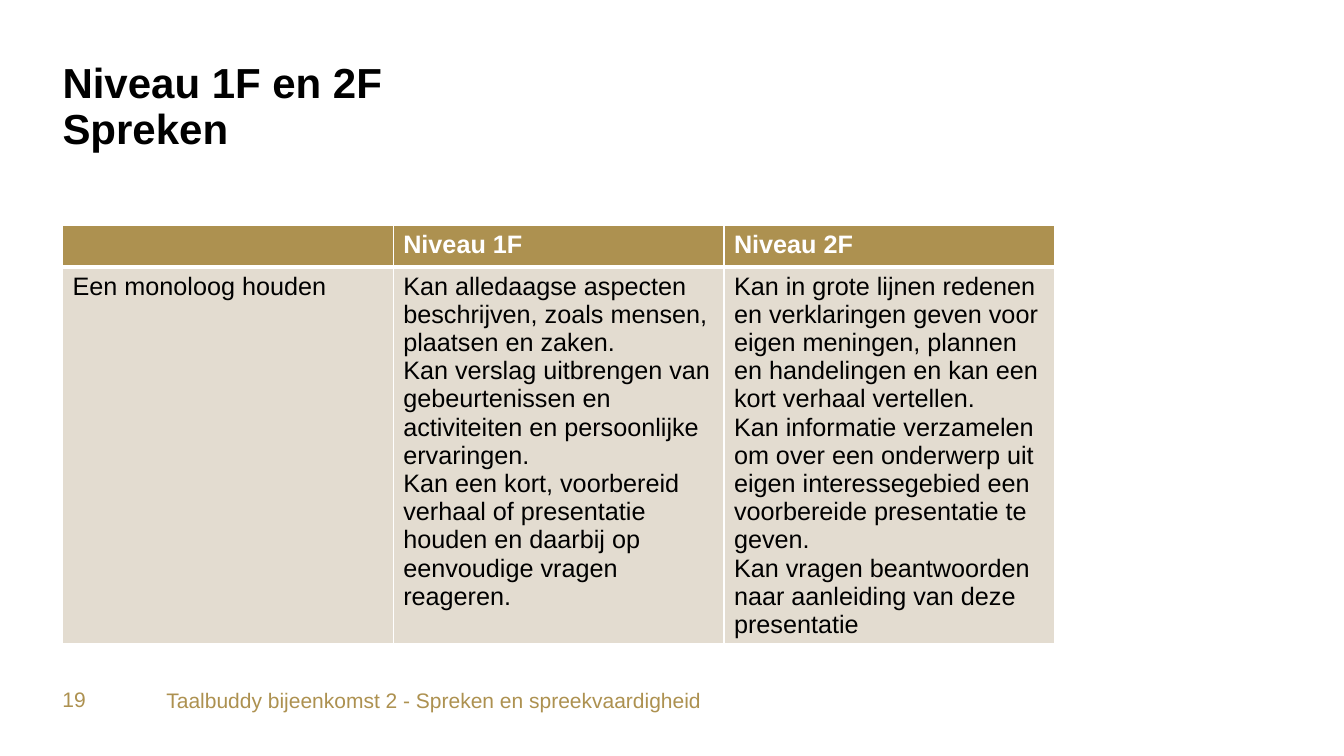
from lxml import etree
from pptx import Presentation
from pptx.dml.color import RGBColor
from pptx.enum.text import MSO_ANCHOR, MSO_AUTO_SIZE, PP_ALIGN
from pptx.oxml.ns import qn
from pptx.util import Inches, Pt

TOP = MSO_ANCHOR.TOP
FIXED = MSO_AUTO_SIZE.NONE
LEFT = PP_ALIGN.LEFT
WIDE, HIGH = 13.33, 7.5
EDGE = 0.62
GOLD, SAND, WHITE, BLACK = "AD9150", "E3DCD0", "FFFFFF", "000000"
HEAD = ["", "Niveau 1F", "Niveau 2F"]
BODY = [
    "Een monoloog houden",
    "Kan alledaagse aspecten beschrijven, zoals mensen, plaatsen en zaken.\n"
    "Kan verslag uitbrengen van gebeurtenissen en activiteiten en persoonlijke ervaringen.\n"
    "Kan een kort, voorbereid verhaal of presentatie houden en daarbij op eenvoudige vragen reageren.",
    "Kan in grote lijnen redenen en verklaringen geven voor eigen meningen, plannen en handelingen "
    "en kan een kort verhaal vertellen.\n"
    "Kan informatie verzamelen om over een onderwerp uit eigen interessegebied een voorbereide "
    "presentatie te geven.\n"
    "Kan vragen beantwoorden naar aanleiding van deze presentatie",
]


def tint(code):
    """Turn a hex string into a colour."""
    return RGBColor.from_string(code)


def write(frame, text, size=18, color=BLACK, bold=False, space=1.0):
    """Fill a text frame with formatted paragraphs."""
    frame.text = text
    frame.word_wrap = True
    for para in frame.paragraphs:
        para.alignment = LEFT
        para.line_spacing = space
        for run in para.runs:
            font = run.font
            font.name, font.size, font.bold = "Arial", Pt(size), bold
            font.color.rgb = tint(color)


def trim(frame):
    """Remove the margins of a frame and pin its text to the top."""
    frame.margin_left = frame.margin_right = 0
    frame.margin_top = frame.margin_bottom = 0
    frame.vertical_anchor = TOP
    frame.auto_size = FIXED


def rule(cell, **sides):
    """Draw white cell borders with the given widths in points."""
    props = cell._tc.get_or_add_tcPr()
    for side, width in sides.items():
        line = etree.SubElement(props, qn("a:ln" + side), w=str(Pt(width)))
        fill = etree.SubElement(line, qn("a:solidFill"))
        etree.SubElement(fill, qn("a:srgbClr"), val=WHITE)


def title(slide, box):
    """Place the two-line title."""
    shape = slide.shapes.title
    shape.left, shape.top, shape.width, shape.height = map(Inches, box)
    trim(shape.text_frame)
    write(shape.text_frame, "Niveau 1F en 2F\vSpreken", size=30, bold=True, space=0.9)


def levels(slide, box):
    """Place the table that compares the levels."""
    rows = [(HEAD, GOLD, WHITE, True, 3), (BODY, SAND, BLACK, False, 1)]
    grid = slide.shapes.add_table(len(rows), len(HEAD), *map(Inches, box)).table
    grid.rows[0].height = Inches(0.41)
    grid.rows[1].height = Inches(box[3] - 0.41)
    for r, (texts, back, color, bold, base) in enumerate(rows):
        for c, text in enumerate(texts):
            cell = grid.cell(r, c)
            rule(cell, L=1, R=1, T=rows[r - 1][4] if r else 1, B=base)
            cell.fill.solid()
            cell.fill.fore_color.rgb = tint(back)
            write(cell.text_frame, text, color=color, bold=bold)


def footer(slide, box):
    """Place the page number and the footer text."""
    left, top, width, height = box
    tab = 1.03
    parts = [
        ("19", left, top, 0.84),
        ("Taalbuddy bijeenkomst 2 - Spreken en spreekvaardigheid", left + tab, top + 0.01, width - tab),
    ]
    for text, x, y, w in parts:
        frame = slide.shapes.add_textbox(*map(Inches, (x, y, w, height))).text_frame
        trim(frame)
        write(frame, text, size=15, color=GOLD)


def main():
    """Build and save the slide."""
    deck = Presentation()
    deck.slide_width, deck.slide_height = Inches(WIDE), Inches(HIGH)
    slide = deck.slides.add_slide(deck.slide_layouts[5])
    title(slide, (EDGE, EDGE, WIDE - 2 * EDGE, 1.31))
    levels(slide, (EDGE, 2.24, 9.84, 4.14))
    footer(slide, (EDGE, 6.81, 11.81, 0.34))
    deck.save("out.pptx")


if __name__ == "__main__":
    main()
